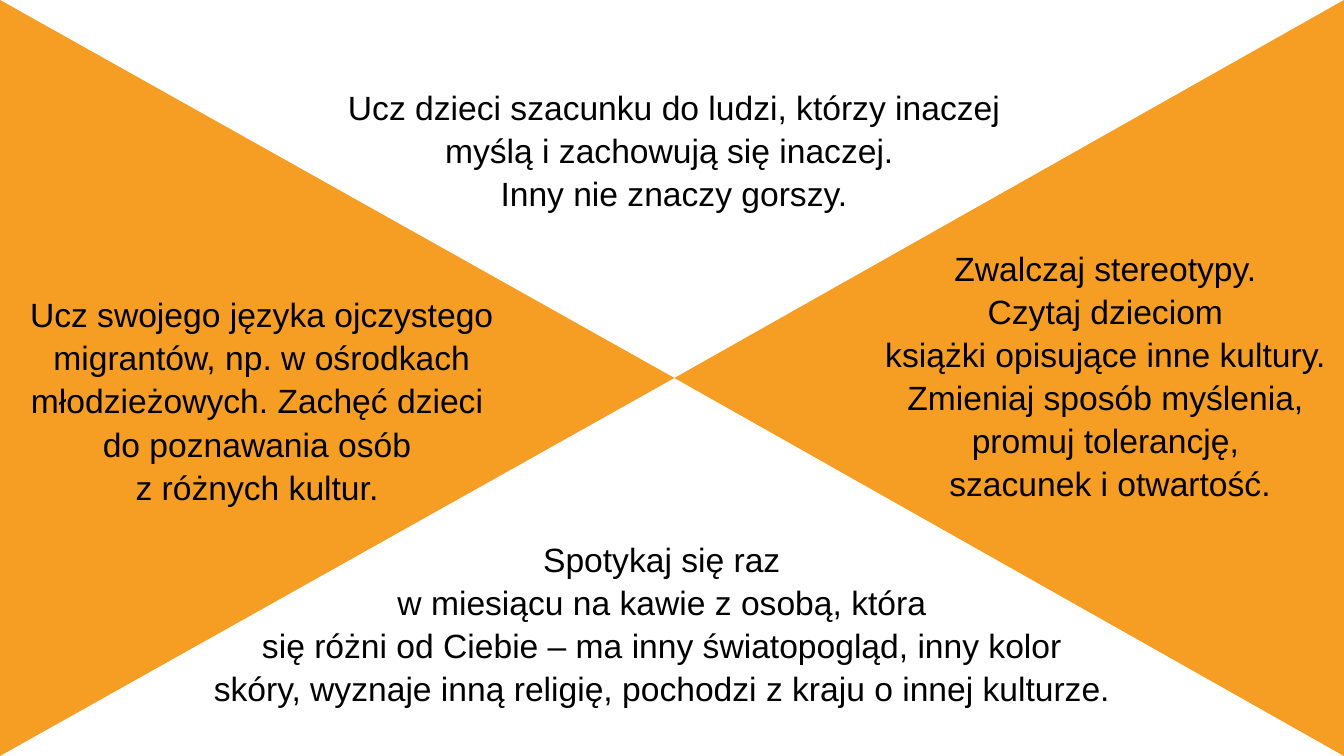
from dataclasses import dataclass

from pptx import Presentation
from pptx.dml.color import RGBColor
from pptx.enum.shapes import MSO_SHAPE as Shape
from pptx.enum.text import MSO_AUTO_SIZE as AutoSize, PP_ALIGN as Align
from pptx.util import Inches, Pt


@dataclass(frozen=True)
class Theme:
    accent: RGBColor = RGBColor(0xF6, 0x9E, 0x23)
    ink: RGBColor = RGBColor(0, 0, 0)
    font: str = "Arial"
    body_size: float = 24
    line_spacing: float = 1.07
    space_after: float = 8


class SlideBuilder:
    """Places elements by percent of the slide's width and height."""

    def __init__(self, deck, theme):
        self.theme = theme
        self.width, self.height = deck.slide_width, deck.slide_height
        self.slide = deck.slides.add_slide(deck.slide_layouts[6])

    def x(self, percent):
        return int(self.width * percent / 100)

    def y(self, percent):
        return int(self.height * percent / 100)

    def side_triangle(self, left, width, rotation):
        """Full-height triangle, turned so that it points sideways."""
        base, depth = self.height, self.x(width)
        centre = self.x(left) + depth // 2
        triangle = self.slide.shapes.add_shape(
            Shape.ISOSCELES_TRIANGLE, centre - base // 2, (base - depth) // 2, base, depth)
        triangle.rotation = rotation
        triangle.shadow.inherit = False
        triangle.fill.solid()
        triangle.fill.fore_color.rgb = self.theme.accent
        triangle.line.fill.background()

    def message(self, left, top, width, height, lines):
        box = self.slide.shapes.add_textbox(
            self.x(left), self.y(top), self.x(width), self.y(height))
        frame = box.text_frame
        frame.word_wrap = True
        frame.auto_size = AutoSize.SHAPE_TO_FIT_TEXT
        paragraph = frame.paragraphs[0]
        paragraph.alignment = Align.CENTER
        paragraph.line_spacing = self.theme.line_spacing
        paragraph.space_after = Pt(self.theme.space_after)
        for index, line in enumerate(lines):
            if index:
                paragraph.add_line_break()
            run = paragraph.add_run()
            run.text = line
            run.font.name = self.theme.font
            run.font.size = Pt(self.theme.body_size)
            run.font.color.rgb = self.theme.ink


def main():
    deck = Presentation()
    deck.slide_width, deck.slide_height = Inches(13.33), Inches(7.5)
    advice = SlideBuilder(deck, Theme())

    # Two triangles meeting near the middle
    meeting = 50.18
    advice.side_triangle(0, meeting, 90)
    advice.side_triangle(meeting, 100 - meeting, 270)

    # Left: language
    advice.message(0, 37.87, 38.94, 30.13, [
        "Ucz swojego języka ojczystego migrantów, np. w ośrodkach "
        "młodzieżowych. Zachęć dzieci ",
        "do poznawania osób ",
        "z różnych kultur. ",
    ])

    # Top: respect
    advice.message(24, 10.4, 52.29, 18.67, [
        "Ucz dzieci szacunku do ludzi, którzy inaczej myślą i zachowują się inaczej. ",
        "Inny nie znaczy gorszy.",
    ])

    # Bottom: meetings
    advice.message(8.48, 70.27, 82.22, 24.4, [
        "Spotykaj się raz ",
        "w miesiącu na kawie z osobą, która ",
        "się różni od Ciebie – ma inny światopogląd, inny kolor ",
        "skóry, wyznaje inną religię, pochodzi z kraju o innej kulturze. ",
    ])

    # Right: stereotypes
    advice.message(56.26, 31.73, 52.66, 35.47, [
        "Zwalczaj stereotypy. ",
        "Czytaj dzieciom ",
        "książki opisujące inne kultury. ",
        "Zmieniaj sposób myślenia, ",
        "promuj tolerancję, ",
        "szacunek i otwartość.",
    ])

    deck.save("out.pptx")


if __name__ == "__main__":
    main()
